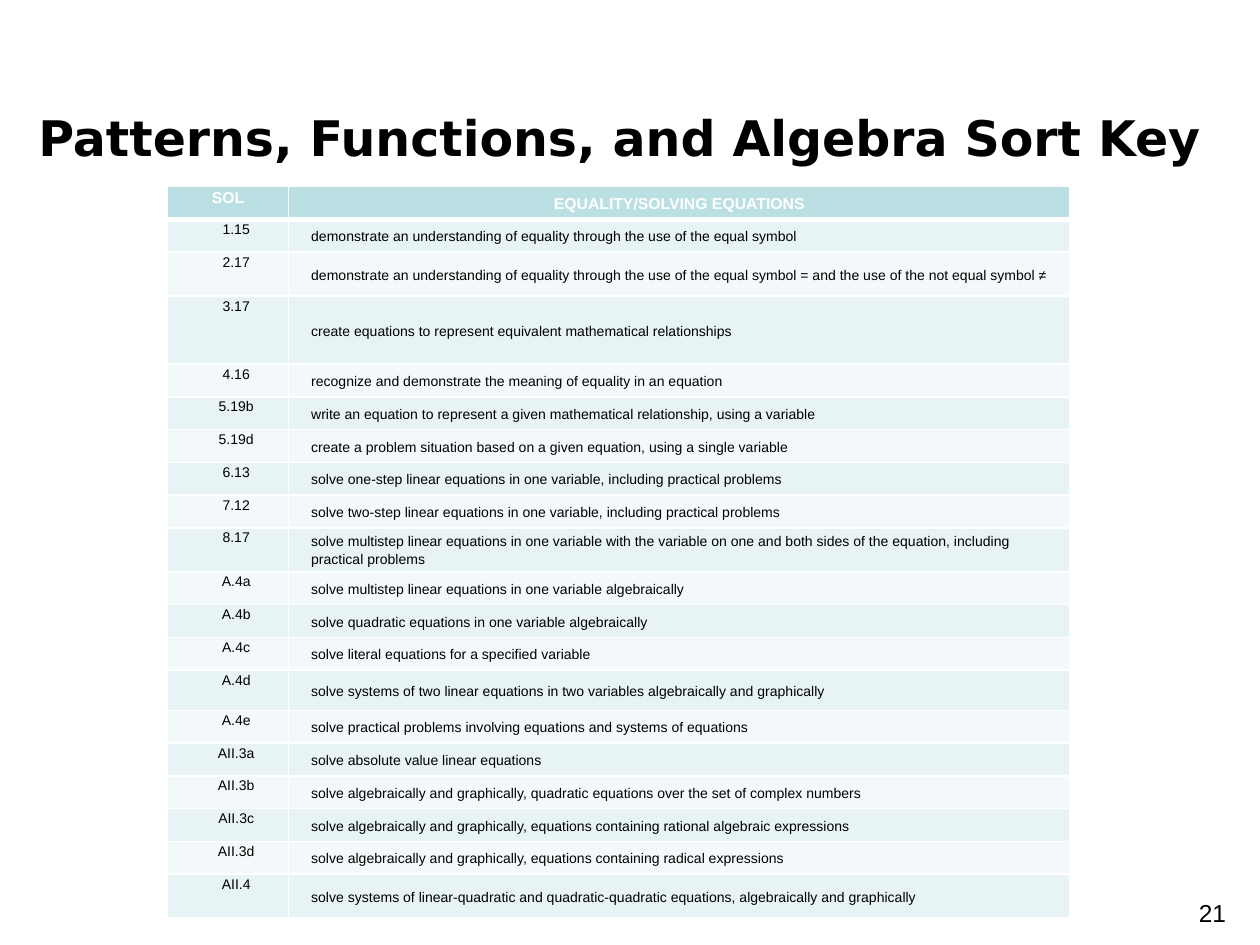
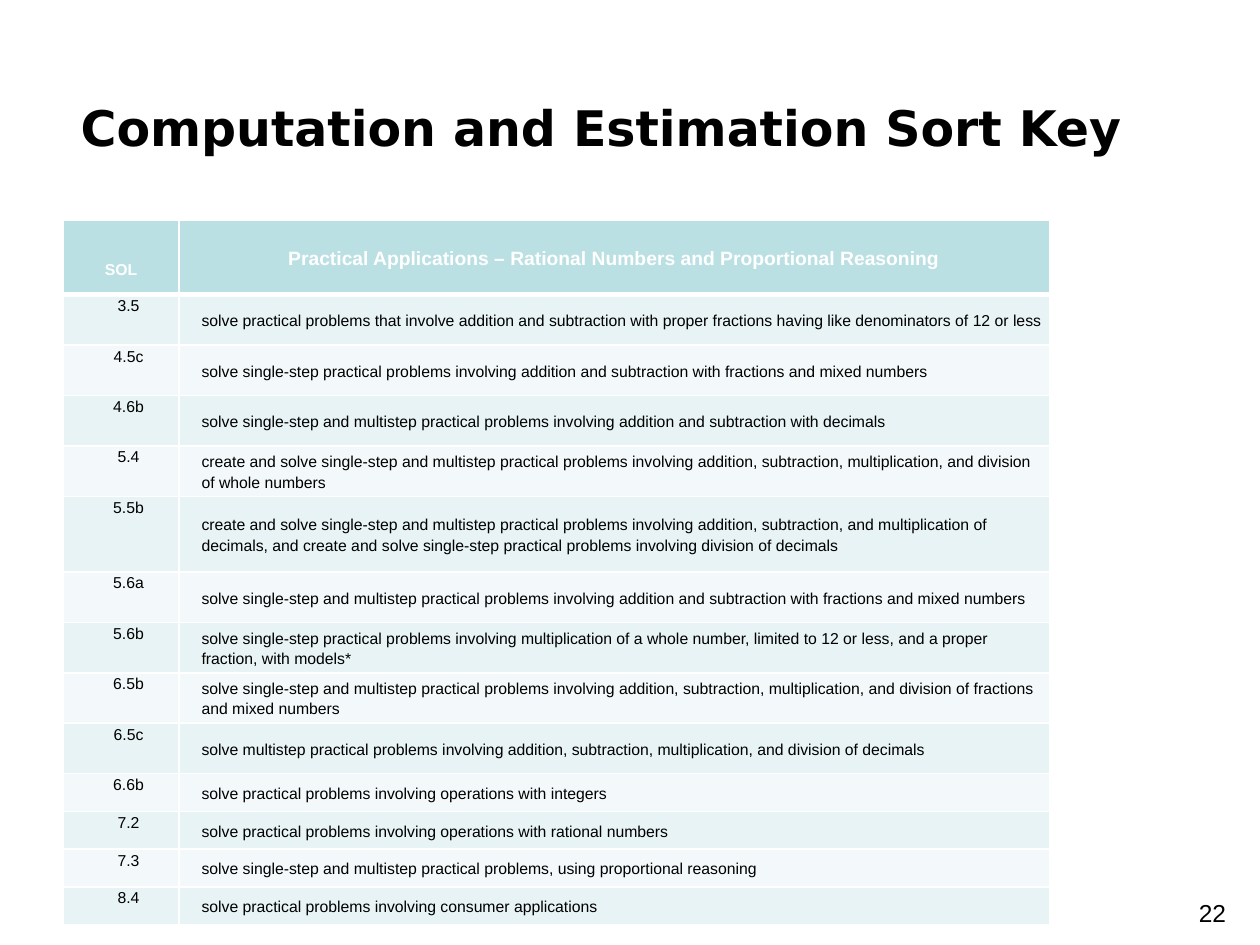
from dataclasses import dataclass, field

from lxml.etree import SubElement
from pptx import Presentation
from pptx.dml.color import RGBColor
from pptx.enum.text import MSO_ANCHOR, PP_ALIGN
from pptx.oxml.ns import qn
from pptx.util import Inches, Pt

BLACK = RGBColor(0x00, 0x00, 0x00)
WHITE = RGBColor(0xFF, 0xFF, 0xFF)
TEAL = RGBColor(0xBB, 0xE0, 0xE3)
BANDS = (RGBColor(0xE7, 0xF3, 0xF4), RGBColor(0xF3, 0xF9, 0xFA))

TITLE_FONT = {"name": "DejaVu Sans", "size": Pt(28), "bold": True}
PAGE_FONT = {"name": "Arial", "size": Pt(14), "bold": False}
CELL_PARA = {"line_spacing": 1.15, "space_before": Pt(0), "space_after": Pt(10)}
THIN, THICK = Pt(1), Pt(3)


@dataclass
class Title:
    text: str
    width: float
    height: float
    align: PP_ALIGN
    inset: dict = field(default_factory=dict)


@dataclass
class Grid:
    left: float
    top: float
    cols: tuple
    row: float
    odd_rows: dict
    pad: float
    indent: float
    head_size: float
    size: float
    head: str
    items: list
    sol_top: float = 0


@dataclass
class Page:
    number: int
    title: Title
    grid: Grid


EQUATIONS = [
    ("1.15", "demonstrate an understanding of equality through the use of the equal symbol"),
    ("2.17", "demonstrate an understanding of equality through the use of the equal symbol = "
             "and the use of the not equal symbol ≠"),
    ("3.17", "create equations to represent equivalent mathematical relationships"),
    ("4.16", "recognize and demonstrate the meaning of equality in an equation"),
    ("5.19b", "write an equation to represent a given mathematical relationship, using a variable"),
    ("5.19d", "create a problem situation based on a given equation, using a single variable"),
    ("6.13", "solve one-step linear equations in one variable, including practical problems"),
    ("7.12", "solve two-step linear equations in one variable, including practical problems"),
    ("8.17", "solve multistep linear equations in one variable with the variable on one and both "
             "sides of the equation, including practical problems"),
    ("A.4a", "solve multistep linear equations in one variable algebraically"),
    ("A.4b", "solve quadratic equations in one variable algebraically"),
    ("A.4c", "solve literal equations for a specified variable"),
    ("A.4d", "solve systems of two linear equations in two variables algebraically and graphically"),
    ("A.4e", "solve practical problems involving equations and systems of equations"),
    ("AII.3a", "solve absolute value linear equations"),
    ("AII.3b", "solve algebraically and graphically, quadratic equations over the set of "
               "complex numbers"),
    ("AII.3c", "solve algebraically and graphically, equations containing rational "
               "algebraic expressions"),
    ("AII.3d", "solve algebraically and graphically, equations containing radical expressions"),
    ("AII.4", "solve systems of linear-quadratic and quadratic-quadratic equations, "
              "algebraically and graphically"),
]

PROBLEMS = [
    ("3.5", "solve practical problems that involve addition and subtraction with proper "
            "fractions having like denominators of 12 or less"),
    ("4.5c", "solve single-step practical problems involving addition and subtraction with "
             "fractions and mixed numbers"),
    ("4.6b", "solve single-step and multistep practical problems involving addition and "
             "subtraction with decimals"),
    ("5.4", "create and solve single-step and multistep practical problems involving addition, "
            "subtraction, multiplication, and division of whole numbers"),
    ("5.5b", "create and solve single-step and multistep practical problems involving addition, "
             "subtraction, and multiplication of decimals, and create and solve single-step "
             "practical problems involving division of decimals"),
    ("5.6a", "solve single-step and multistep practical problems involving addition and "
             "subtraction with fractions and mixed numbers"),
    ("5.6b", "solve single-step practical problems involving multiplication of a whole number, "
             "limited to 12 or less, and a proper fraction, with models*"),
    ("6.5b", "solve single-step and multistep practical problems involving addition, "
             "subtraction, multiplication, and division of fractions and mixed numbers"),
    ("6.5c", "solve multistep practical problems involving addition, subtraction, "
             "multiplication, and division of decimals"),
    ("6.6b", "solve practical problems involving operations with integers"),
    ("7.2", "solve practical problems involving operations with rational numbers"),
    ("7.3", "solve single-step and multistep practical problems, using proportional reasoning"),
    ("8.4", "solve practical problems involving consumer applications"),
]

PAGES = [
    Page(
        21,
        Title("Patterns, Functions, and Algebra Sort Key", 9.83, 0.83, PP_ALIGN.CENTER),
        Grid(1.33, 1.48, (0.96, 6.2), 0.26, {2: 0.35, 3: 0.54, 9: 0.35, 13: 0.32, 19: 0.35},
             0.05, 0.13, 9, 8, "EQUALITY/SOLVING EQUATIONS", EQUATIONS),
    ),
    Page(
        22,
        Title("Computation and Estimation Sort Key", 9, 1.25, PP_ALIGN.LEFT,
              {"margin_left": Inches(0.64), "margin_right": Inches(0),
               "margin_bottom": Inches(0.62)}),
        Grid(0.5, 1.75, (0.92, 6.91), 0.4, {0: 0.59, 5: 0.6} | dict.fromkeys(range(10, 14), 0.3),
             0.06, 0.12, 11, 9, "Practical Applications – Rational Numbers and "
             "Proportional Reasoning", PROBLEMS, 0.3),
    ),
]


def apply(target: object, values: dict) -> None:
    for name, value in values.items():
        setattr(target, name, value)


def style(para, font: dict, color: RGBColor, align: PP_ALIGN) -> None:
    para.alignment = align
    apply(para.font, font)
    para.font.color.rgb = color


def add_title(slide, title: Title) -> None:
    shape = slide.shapes.title
    apply(shape, {"left": Inches(0), "top": Inches(0.67),
                  "width": Inches(title.width), "height": Inches(title.height)})
    frame = shape.text_frame
    frame.text = title.text
    apply(frame, {"vertical_anchor": MSO_ANCHOR.MIDDLE, "word_wrap": True} | title.inset)
    style(frame.paragraphs[0], TITLE_FONT, BLACK, title.align)


def add_edges(cell, widths: dict) -> None:
    """Draw white cell borders; the fill must already be set."""
    props = cell._tc.get_or_add_tcPr()
    for spot, (side, width) in enumerate(widths.items()):
        line = SubElement(props, qn(f"a:ln{side}"), w=str(width))
        SubElement(SubElement(line, qn("a:solidFill")), qn("a:srgbClr"), val=str(WHITE))
        props.insert(spot, line)


def fill_cell(cell, text: str, grid: Grid, row: int, col: int) -> None:
    head, code = row == 0, col == 0
    pad = Inches(grid.pad)
    apply(cell, {
        "text": text, "margin_left": pad, "margin_right": pad, "margin_bottom": 0,
        "margin_top": Inches(grid.sol_top if head and code else 0),
        "vertical_anchor": MSO_ANCHOR.TOP if code else MSO_ANCHOR.MIDDLE,
    })
    cell.fill.solid()
    cell.fill.fore_color.rgb = TEAL if head else BANDS[(row - 1) % 2]
    add_edges(cell, {"L": THIN, "R": THIN, "T": THICK if row == 1 else THIN,
                     "B": THICK if head else THIN})
    para = cell.text_frame.paragraphs[0]
    apply(para, CELL_PARA)
    if head:
        size = 9 if code else grid.head_size
    else:
        size = grid.size
        props = para._p.get_or_add_pPr()
        props.set("marL", str(Inches(grid.indent)))
        props.set("indent", "0")
    style(para, {"name": "Arial", "size": Pt(size), "bold": head},
          WHITE if head else BLACK,
          PP_ALIGN.CENTER if head or code else PP_ALIGN.LEFT)


def add_grid(slide, grid: Grid) -> None:
    rows = [("SOL", grid.head), *grid.items]
    highs = [grid.odd_rows.get(i, grid.row) for i in range(len(rows))]
    table = slide.shapes.add_table(
        len(rows), len(grid.cols), Inches(grid.left), Inches(grid.top),
        Inches(sum(grid.cols)), Inches(sum(highs))).table
    table.horz_banding = False
    for col, width in zip(table.columns, grid.cols):
        col.width = Inches(width)
    for r, (texts, high) in enumerate(zip(rows, highs)):
        table.rows[r].height = Inches(high)
        for c, text in enumerate(texts):
            fill_cell(table.cell(r, c), text, grid, r, c)


def add_number(slide, number: int) -> None:
    box = slide.shapes.add_textbox(Inches(7.5), Inches(7.08), Inches(2.33), Inches(0.52))
    frame = box.text_frame
    frame.word_wrap = True
    frame.text = str(number)
    style(frame.paragraphs[0], PAGE_FONT, BLACK, PP_ALIGN.RIGHT)


def main() -> None:
    deck = Presentation()
    apply(deck, {"slide_width": Inches(10), "slide_height": Inches(7.5)})
    for page in PAGES:
        slide = deck.slides.add_slide(deck.slide_layouts[5])
        add_title(slide, page.title)
        add_grid(slide, page.grid)
        add_number(slide, page.number)
    deck.save("out.pptx")


if __name__ == "__main__":
    main()
